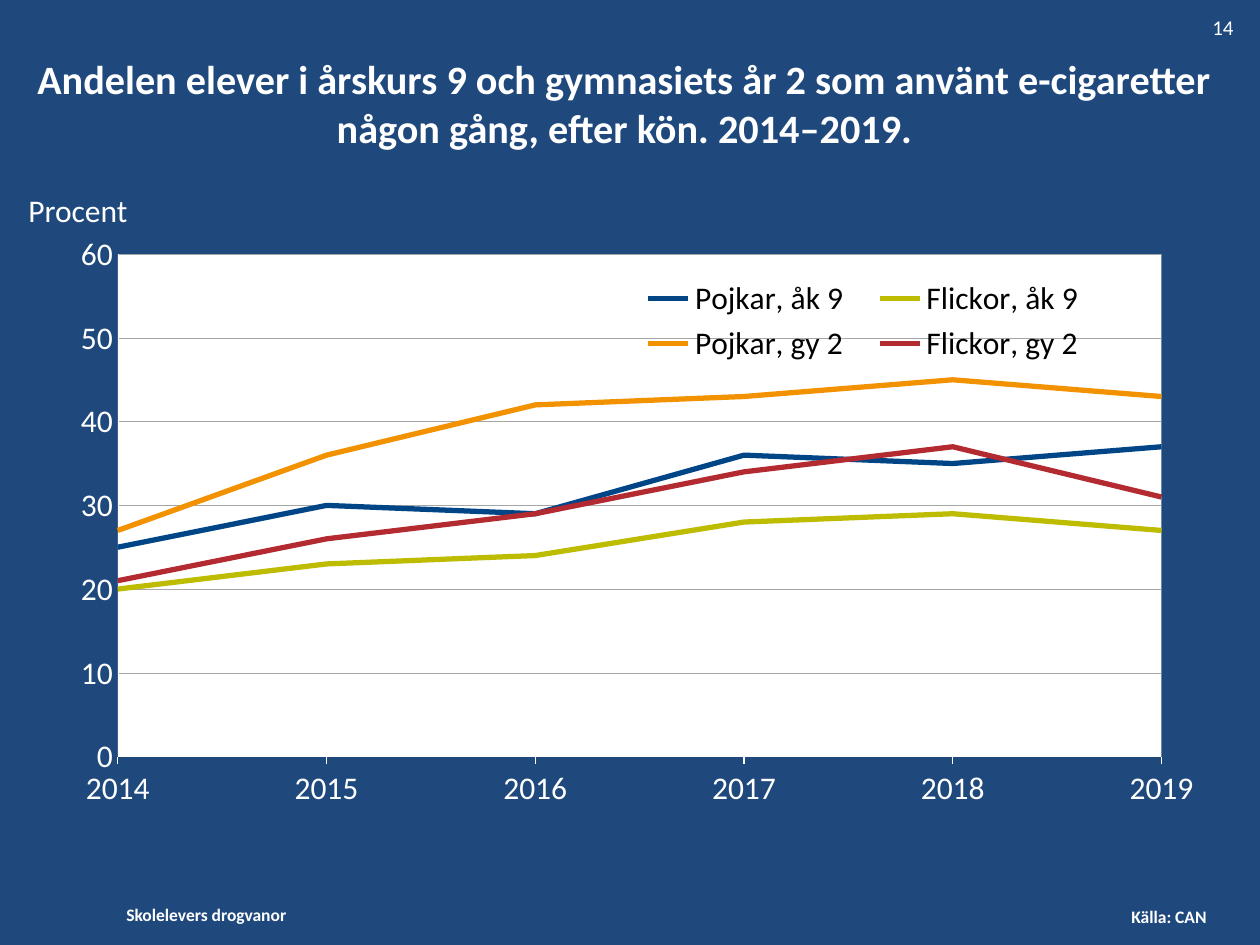
import pptx
import pptx.chart.data
import pptx.dml.color
import pptx.enum.chart
import pptx.enum.text
import pptx.oxml
import pptx.oxml.ns
import pptx.util

PX = 914400 / 126
FONT = "Calibri"
WHITE = "FFFFFF"
CHART_NAMESPACE = pptx.oxml.ns.nsdecls("c", "a")
YEARS = ["2014", "2015", "2016", "2017", "2018", "2019"]
SERIES = [
    ("Pojkar, åk 9", (25, 30, 29, 36, 35, 37), "004687"),
    ("Flickor, åk 9", (20, 23, 24, 28, 29, 27), "BEBC00"),
    ("Pojkar, gy 2", (27, 36, 42, 43, 45, 43), "F29200"),
    ("Flickor, gy 2", (21, 26, 29, 34, 37, 31), "B32B31"),
]


def px(length):
    """Turn pixels into EMU."""
    return pptx.util.Emu(round(length * PX))


def color(value):
    """Turn a hex string into a colour."""
    return pptx.dml.color.RGBColor.from_string(value)


def format_font(font, size, value=WHITE, bold=False):
    """Set family, size, colour and weight of a font."""
    font.name = FONT
    font.size = pptx.util.Pt(size)
    font.bold = bold
    font.color.rgb = color(value)


def format_line(line, value, width):
    """Set colour and width of a line."""
    line.color.rgb = color(value)
    line.width = pptx.util.Pt(width)


def add_title(slide, box, text):
    """Place and format the title placeholder."""
    title = slide.shapes.title
    title.left, title.top, title.width, title.height = map(px, box)
    title.text_frame.text = text
    title.text_frame.word_wrap = True
    title.text_frame.vertical_anchor = pptx.enum.text.MSO_ANCHOR.MIDDLE
    paragraph = title.text_frame.paragraphs[0]
    paragraph.alignment = pptx.enum.text.PP_ALIGN.CENTER
    format_font(paragraph.font, 23, bold=True)


def add_label(slide, box, text, size, bold=False):
    """Add a one-line text box."""
    frame = slide.shapes.add_textbox(*map(px, box)).text_frame
    frame.word_wrap = True
    frame.text = text
    format_font(frame.paragraphs[0].font, size, bold=bold)


def set_layout(parent, index, box, target=""):
    """Give a chart part a manual layout in fractions of the chart."""
    for layout in parent.findall(pptx.oxml.ns.qn("c:layout")):
        parent.remove(layout)
    sizes = "".join(f'<c:{name} val="{value}"/>' for name, value in zip("xywh", box))
    parent.insert(index, pptx.oxml.parse_xml(
        f"<c:layout {CHART_NAMESPACE}><c:manualLayout>{target}"
        f'<c:xMode val="edge"/><c:yMode val="edge"/>{sizes}'
        "</c:manualLayout></c:layout>"))


def format_axes(chart):
    """Format both axes and the gridlines."""
    category_axis, value_axis = chart.category_axis, chart.value_axis
    for axis, width in ((category_axis, 0.75), (value_axis, 0.23)):
        format_font(axis.tick_labels.font, 18)
        format_line(axis.format.line, WHITE, width)
    category_axis.major_tick_mark = pptx.enum.chart.XL_TICK_MARK.OUTSIDE
    value_axis.major_tick_mark = pptx.enum.chart.XL_TICK_MARK.NONE
    value_axis.minimum_scale, value_axis.maximum_scale = 0, 60
    value_axis.major_unit = 10
    value_axis.tick_labels.number_format = "0"
    value_axis.tick_labels.number_format_is_linked = False
    format_line(value_axis.major_gridlines.format.line, "A6A6A6", 0.23)
    crossing = value_axis._element.find(pptx.oxml.ns.qn("c:crossBetween"))
    if crossing is None:
        crossing = pptx.oxml.parse_xml(f"<c:crossBetween {CHART_NAMESPACE}/>")
        value_axis._element.find(pptx.oxml.ns.qn("c:crosses")).addnext(crossing)
    crossing.set("val", "midCat")


def add_line_chart(slide, box):
    """Add the line chart with its legend inside the plot."""
    data = pptx.chart.data.CategoryChartData(number_format="0")
    data.categories = YEARS
    for name, values, _ in SERIES:
        data.add_series(name, values)
    chart = slide.shapes.add_chart(
        pptx.enum.chart.XL_CHART_TYPE.LINE, *map(px, box), data).chart
    format_font(chart.font, 18)
    chart.has_title = False
    chart.plots[0].vary_by_categories = False
    for series, (_, _, value) in zip(chart.plots[0].series, SERIES):
        series.smooth = False
        series.marker.style = pptx.enum.chart.XL_MARKER_STYLE.NONE
        format_line(series.format.line, value, 3)
    format_axes(chart)

    chart.has_legend = True
    chart.legend.position = pptx.enum.chart.XL_LEGEND_POSITION.TOP
    chart.legend.include_in_layout = False
    format_font(chart.legend.font, 18, "000000")
    set_layout(chart.legend._element, 1, (0.5, 0.12, 0.42, 0.15))

    plot_area = chart._chartSpace.chart.plotArea
    set_layout(plot_area, 0, (0.06, 0.09, 0.91, 0.79),
               '<c:layoutTarget val="inner"/>')
    plot_area.append(pptx.oxml.parse_xml(
        f'<c:spPr {CHART_NAMESPACE}><a:solidFill><a:srgbClr val="{WHITE}"/>'
        "</a:solidFill><a:ln><a:noFill/></a:ln></c:spPr>"))


def main():
    """Build and save the slide."""
    presentation = pptx.Presentation()
    presentation.slide_width, presentation.slide_height = px(1260), px(945)
    slide = presentation.slides.add_slide(presentation.slide_layouts[5])
    slide.background.fill.solid()
    slide.background.fill.fore_color.rgb = color("1F497D")
    add_title(slide, (5, 38, 1240, 130),
              "Andelen elever i årskurs 9 och gymnasiets år 2 som använt "
              "e-cigaretter någon gång, efter kön. 2014–2019.")
    add_line_chart(slide, (49, 197, 1147, 636))
    add_label(slide, (16, 185, 140, 50), "Procent", 18)
    add_label(slide, (1200, 8, 60, 38), "14", 12)
    add_label(slide, (114, 898, 210, 34), "Skolelevers drogvanor", 10, True)
    add_label(slide, (1119, 900, 118, 34), "Källa: CAN", 10, True)
    presentation.save("out.pptx")


if __name__ == "__main__":
    main()
